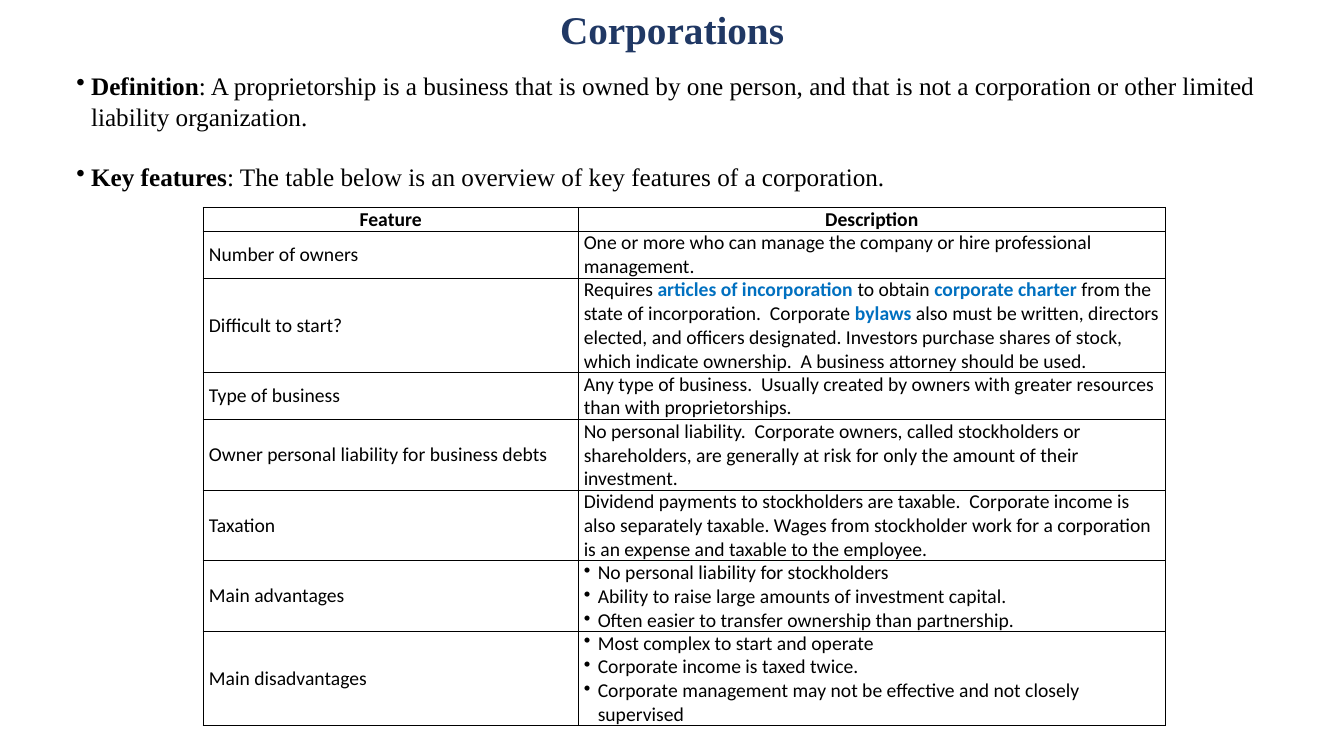
from dataclasses import dataclass

from lxml.etree import SubElement
from pptx import Presentation
from pptx.dml.color import RGBColor
from pptx.enum.text import MSO_ANCHOR as Anchor, PP_ALIGN as Align
from pptx.oxml.ns import qn
from pptx.util import Pt


@dataclass(frozen=True)
class Theme:
    """Colours, fonts and sizes of the slide."""
    title_color: str = "203864"
    text_color: str = "000000"
    term_color: str = "0070C0"
    serif: str = "Times New Roman"
    sans: str = "Calibri"
    title_size: float = 28
    body_size: float = 18
    table_size: float = 14
    line_height: float = 16.8


THEME = Theme()

INTRO = [
    ("Definition", ": A proprietorship is a business that is owned by one person, "
     "and that is not a corporation or other limited liability organization."),
    ("Key features", ": The table below is an overview of key features of a corporation."),
]

START_STEPS = [
    ("Requires ", False),
    ("articles of incorporation ", True),
    ("to obtain ", False),
    ("corporate charter", True),
    (" from the state of incorporation.  Corporate ", False),
    ("bylaws", True),
    (" also must be written, directors elected, and officers designated. "
     "Investors purchase shares of stock, which indicate ownership.  "
     "A business attorney should be used.", False),
]

ADVANTAGES = [
    "No personal liability for stockholders",
    "Ability to raise large amounts of investment capital.",
    "Often easier to transfer ownership than partnership.",
]

DISADVANTAGES = [
    "Most complex to start and operate",
    "Corporate income is taxed twice.",
    "Corporate management may not be effective and not closely supervised",
]

FEATURES = [
    ("Number of owners", 2, [[(
        "One or more who can manage the company or hire professional management.", False)]]),
    ("Difficult to start?", 4, [START_STEPS]),
    ("Type of business", 2, [[(
        "Any type of business.  Usually created by owners with greater resources "
        "than with proprietorships.", False)]]),
    ("Owner personal liability for business debts", 3, [[(
        "No personal liability.  Corporate owners, called stockholders or shareholders, "
        "are generally at risk for only the amount of their investment.", False)]]),
    ("Taxation", 3, [[(
        "Dividend payments to stockholders are taxable.  Corporate income is also "
        "separately taxable. Wages from stockholder work for a corporation is an "
        "expense and taxable to the employee.", False)]]),
    ("Main advantages", 3, [[(item, False)] for item in ADVANTAGES]),
    ("Main disadvantages", 4, [[(item, False)] for item in DISADVANTAGES]),
]


def add_run(paragraph, text, font_name, size, color=THEME.text_color, bold=False):
    """Append a formatted run to a paragraph."""
    run = paragraph.add_run()
    run.text = text
    run.font.name = font_name
    run.font.size = Pt(size)
    run.font.bold = bold
    run.font.color.rgb = RGBColor.from_string(color)


def set_bullet(paragraph, indent):
    """Give a paragraph a round bullet with a hanging indent."""
    properties = paragraph._p.get_or_add_pPr()
    properties.set("marL", str(Pt(indent)))
    properties.set("indent", str(-Pt(indent)))
    SubElement(properties, qn("a:buChar")).set("char", "•")


def add_text_frame(slide, left, top, width, height):
    """Add a wrapping text box and return its text frame."""
    text_frame = slide.shapes.add_textbox(Pt(left), Pt(top), Pt(width), Pt(height)).text_frame
    text_frame.word_wrap = True
    return text_frame


def add_title(slide, text):
    """Add the centred slide title."""
    paragraph = add_text_frame(slide, 240, 0, 480, 63).paragraphs[0]
    paragraph.alignment = Align.CENTER
    add_run(paragraph, text, THEME.serif, THEME.title_size, THEME.title_color, True)


def add_intro(slide, items):
    """Add the bulleted statements that open with a bold term."""
    text_frame = add_text_frame(slide, 47.5, 47, 865, 94)
    for index, (term, statement) in enumerate(items):
        paragraph = text_frame.add_paragraph() if index else text_frame.paragraphs[0]
        paragraph.space_before = Pt(21.5 * index)
        add_run(paragraph, term, THEME.serif, THEME.body_size, bold=True)
        add_run(paragraph, statement, THEME.serif, THEME.body_size)
        set_bullet(paragraph, 10.5)


def style_cell(cell):
    """Set a cell's margins, thin black borders and empty fill."""
    cell.margin_left = cell.margin_right = Pt(4)
    cell.margin_top = cell.margin_bottom = 0
    properties = cell._tc.get_or_add_tcPr()
    for side in ("a:lnL", "a:lnR", "a:lnT", "a:lnB"):
        line = SubElement(properties, qn(side), w=str(Pt(1)))
        fill = SubElement(line, qn("a:solidFill"))
        SubElement(fill, qn("a:srgbClr"), val=THEME.text_color)
    cell.fill.background()


def fill_cell(cell, paragraphs, header=False):
    """Write paragraphs of (text, is_term) pieces, bulleted when there are several."""
    style_cell(cell)
    for index, pieces in enumerate(paragraphs):
        paragraph = cell.text_frame.add_paragraph() if index else cell.text_frame.paragraphs[0]
        paragraph.alignment = Align.CENTER if header else Align.LEFT
        for text, is_term in pieces:
            color = THEME.term_color if is_term else THEME.text_color
            add_run(paragraph, text, THEME.sans, THEME.table_size, color, is_term or header)
        if len(paragraphs) > 1:
            set_bullet(paragraph, 10)


def add_feature_table(slide, features):
    """Add the table of features, each row as high as its lines of text."""
    rows = [("Feature", 1, [[("Description", False)]])] + features
    widths = (267.75, 419.5)
    height = THEME.line_height * sum(lines for _, lines, _ in rows)
    table = slide.shapes.add_table(
        len(rows), len(widths), Pt(145.25), Pt(148.25), Pt(sum(widths)), Pt(height)).table
    table.first_row = table.horz_banding = False
    for column, width in zip(table.columns, widths):
        column.width = Pt(width)
    for index, (feature, lines, description) in enumerate(rows):
        table.rows[index].height = Pt(THEME.line_height * lines)
        fill_cell(table.cell(index, 0), [[(feature, False)]], index == 0)
        fill_cell(table.cell(index, 1), description, index == 0)
        table.cell(index, 0).vertical_anchor = Anchor.MIDDLE


def main():
    """Build the slide and save it."""
    presentation = Presentation()
    presentation.slide_width, presentation.slide_height = Pt(960), Pt(540)
    slide = presentation.slides.add_slide(presentation.slide_layouts[6])
    add_title(slide, "Corporations")
    add_intro(slide, INTRO)
    add_feature_table(slide, FEATURES)
    presentation.save("out.pptx")


if __name__ == "__main__":
    main()
